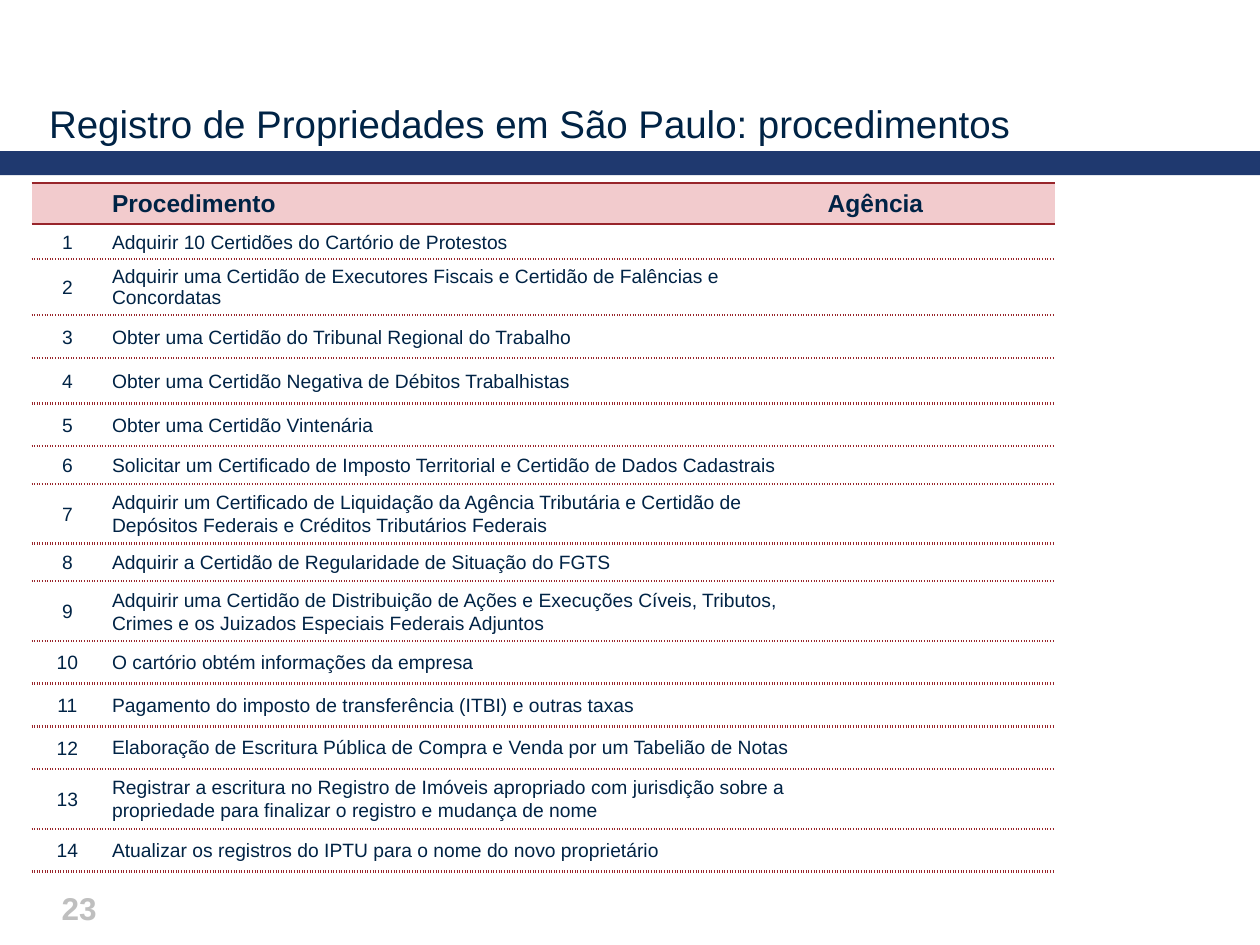
from lxml.etree import SubElement
from pptx import Presentation
from pptx.dml.color import RGBColor
from pptx.enum.shapes import MSO_SHAPE
from pptx.enum.text import MSO_ANCHOR, PP_ALIGN
from pptx.oxml.ns import qn
from pptx.util import Inches, Pt

COLORS = {"navy": "1F396F", "text": "002345", "rule": "98252B",
          "header": "F2CBCD", "number": "BFBFBF"}
COL_WIDTHS = [0.57, 5.68, 1.87]
HEADERS = ["", "Procedimento", "Agência"]
HEADER_HEIGHT = 0.3
PROCEDURES = [
    ("Adquirir 10 Certidões do Cartório de Protestos", 0.26),
    ("Adquirir uma Certidão de Executores Fiscais e Certidão de Falências e Concordatas", 0.44),
    ("Obter uma Certidão do Tribunal Regional do Trabalho", 0.34),
    ("Obter uma Certidão Negativa de Débitos Trabalhistas", 0.36),
    ("Obter uma Certidão Vintenária", 0.34),
    ("Solicitar um Certificado de Imposto Territorial e Certidão de Dados Cadastrais", 0.3),
    ("Adquirir um Certificado de Liquidação da Agência Tributária e Certidão de "
     "Depósitos Federais e Créditos Tributários Federais", 0.45),
    ("Adquirir a Certidão de Regularidade de Situação do FGTS", 0.3),
    ("Adquirir uma Certidão de Distribuição de Ações e Execuções Cíveis, Tributos, "
     "Crimes e os Juizados Especiais Federais Adjuntos", 0.45),
    ("O cartório obtém informações da empresa", 0.34),
    ("Pagamento do imposto de transferência (ITBI) e outras taxas", 0.34),
    ("Elaboração de Escritura Pública de Compra e Venda por um Tabelião de Notas", 0.34),
    ("Registrar a escritura no Registro de Imóveis apropriado com jurisdição sobre a "
     "propriedade para finalizar o registro e mudança de nome", 0.45),
    ("Atualizar os registros do IPTU para o nome do novo proprietário", 0.34),
]
SINGLE_SPACED = {2, 12}


def rgb(name):
    return RGBColor.from_string(COLORS[name])


def add_run(p, text, size, color="text", bold=False):
    r = p.add_run()
    r.text = text
    r.font.name = "Arial"
    r.font.size = Pt(size)
    r.font.bold = bold
    r.font.color.rgb = rgb(color)


def add_text(s, box, text, size, color="text", bold=False, anchor=MSO_ANCHOR.TOP, inset=None):
    tf = s.shapes.add_textbox(*map(Inches, box)).text_frame
    tf.word_wrap = True
    tf.vertical_anchor = anchor
    if inset is not None:
        tf.margin_left = tf.margin_right = Inches(inset)
        tf.margin_top = tf.margin_bottom = Inches(inset)
    add_run(tf.paragraphs[0], text, size, color, bold)


def add_heading(s, left, top, width, height):
    band_height = 0.19
    band_top = top + height - band_height
    sp = s.shapes.add_shape(MSO_SHAPE.RECTANGLE, Inches(left), Inches(band_top),
                            Inches(width), Inches(band_height))
    sp.shadow.inherit = False
    sp.fill.solid()
    sp.fill.fore_color.rgb = rgb("navy")
    sp.line.fill.background()
    add_text(s, (left + 0.39, top, 9.25, 0.83),
             "Registro de Propriedades em São Paulo: procedimentos", 22,
             anchor=MSO_ANCHOR.BOTTOM, inset=0)


def set_borders(cell, top_dash, bottom_dash):
    tc_pr = cell._tc.get_or_add_tcPr()
    for side in ("lnL", "lnR"):
        SubElement(SubElement(tc_pr, qn(f"a:{side}"), w="0"), qn("a:noFill"))
    for side, dash in (("lnT", top_dash), ("lnB", bottom_dash)):
        ln = SubElement(tc_pr, qn(f"a:{side}"), w=str(Pt(1.5)))
        fill = SubElement(ln, qn("a:solidFill"))
        SubElement(fill, qn("a:srgbClr"), val=COLORS["rule"])
        SubElement(ln, qn("a:prstDash"), val=dash)


def fill_cell(cell, text, row, col):
    header = row == 0
    size = 14 if header else 11
    set_borders(cell, "solid" if row <= 1 else "sysDot", "solid" if header else "sysDot")
    if header:
        cell.fill.solid()
        cell.fill.fore_color.rgb = rgb("header")
    else:
        cell.fill.background()
    cell.vertical_anchor = MSO_ANCHOR.MIDDLE
    cell.margin_left = cell.margin_right = Inches(0.07)
    cell.margin_top = cell.margin_bottom = Inches(0.04)
    p = cell.text_frame.paragraphs[0]
    if not text:
        SubElement(p._p, qn("a:endParaRPr"), sz=str(size * 100))
        return
    if col == 0:
        p.alignment = PP_ALIGN.CENTER
    if col != 1 or row not in SINGLE_SPACED:
        p.line_spacing = 1.07
        if col == 1 and not header:
            p.space_after = Pt(7.5)
    add_run(p, text, size, bold=header)


def add_procedures(s, left, top, width, height):
    rows = [HEADERS] + [[str(i), name, ""] for i, (name, _) in enumerate(PROCEDURES, 1)]
    heights = [HEADER_HEIGHT] + [h for _, h in PROCEDURES]
    table = s.shapes.add_table(len(rows), len(COL_WIDTHS), Inches(left), Inches(top),
                               Inches(width), Inches(height)).table
    table.first_row = table.horz_banding = False
    for column, w in zip(table.columns, COL_WIDTHS):
        column.width = Inches(w)
    for i, (values, h) in enumerate(zip(rows, heights)):
        table.rows[i].height = Inches(h)
        for j, text in enumerate(values):
            fill_cell(table.cell(i, j), text, i, j)


def main():
    prs = Presentation()
    prs.slide_width, prs.slide_height = Inches(10), Inches(7.5)
    s = prs.slides.add_slide(prs.slide_layouts[6])
    add_heading(s, 0, 0.33, 10, 1.06)
    add_text(s, (0.39, 7.01, 0.6, 0.39), "23", 18, "number", bold=True)
    add_procedures(s, 0.25, 1.45, 8.12, 5.38)
    prs.save("out.pptx")


if __name__ == "__main__":
    main()
